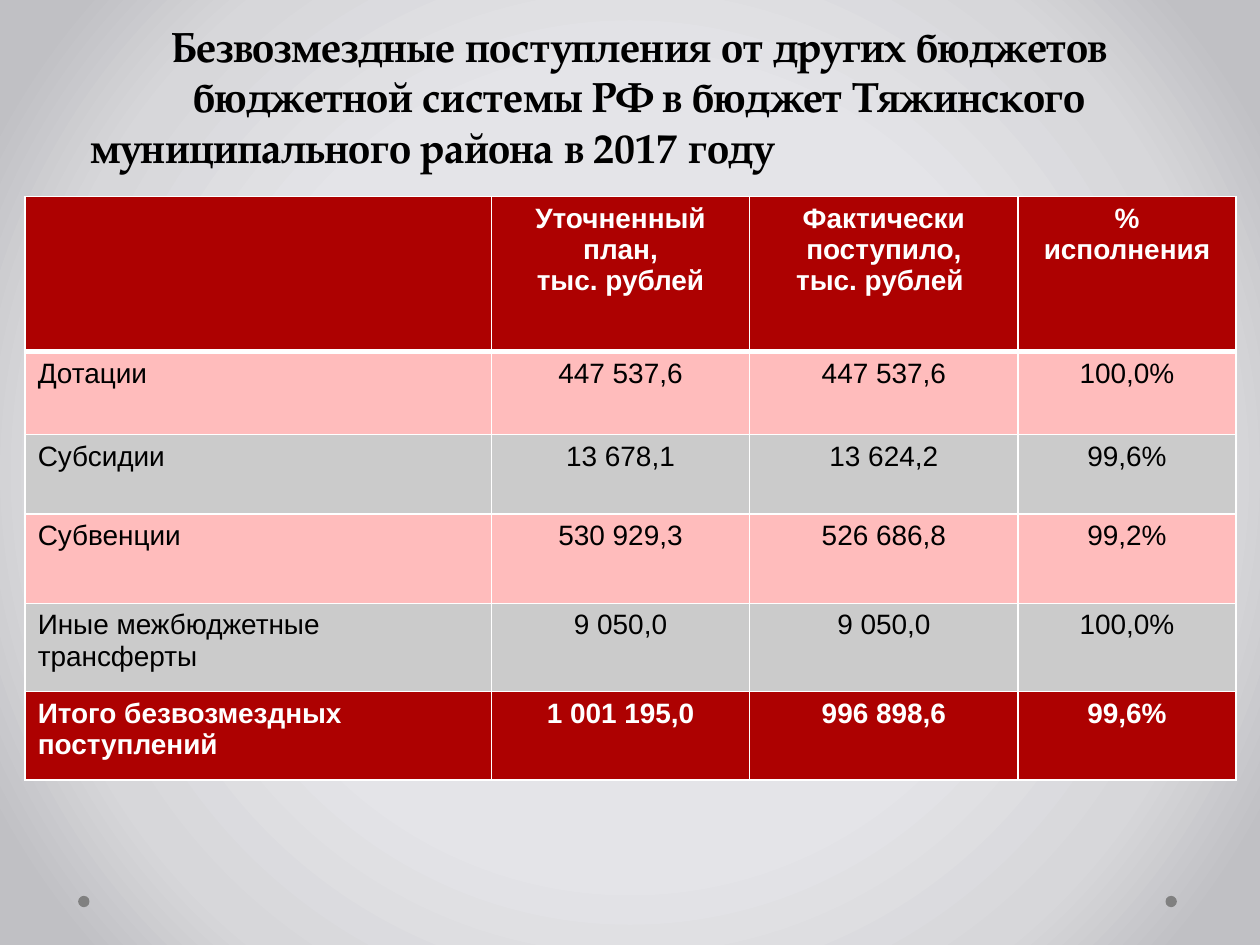
from dataclasses import dataclass

from lxml.etree import SubElement
from pptx import Presentation
from pptx.dml.color import RGBColor
from pptx.enum.shapes import MSO_SHAPE
from pptx.enum.text import MSO_ANCHOR, PP_ALIGN
from pptx.oxml import parse_xml
from pptx.oxml.ns import nsdecls, qn
from pptx.util import Inches, Pt


@dataclass(frozen=True)
class Theme:
    title_font: str = "TeX Gyre Pagella"
    table_font: str = "Arial"
    title_size: int = 24
    table_size: int = 16
    black: str = "000000"
    white: str = "FFFFFF"
    red: str = "AD0101"
    pink: str = "FFBCBC"
    grey: str = "CBCBCB"
    dot: str = "808080"
    background: tuple = ((50, "E4E4E8"), (76, "D7D7DA"), (92, "C0C0C4"))
    border: int = 1
    header_border: int = 3


@dataclass(frozen=True)
class TableRow:
    cells: tuple
    height: float
    fill: str
    color: str = "000000"
    bold: bool = False


THEME = Theme()
COLUMN_WIDTHS = (3.7, 2.05, 2.13, 1.73)
ROWS = (
    TableRow(("", "Уточненный план,\nтыс. рублей", "Фактически поступило,\nтыс. рублей ",
              "% исполнения"), 1.23, THEME.red, THEME.white, True),
    TableRow(("Дотации", "447 537,6", "447 537,6", "100,0%"), 0.66, THEME.pink),
    TableRow(("Субсидии", "13 678,1", "13 624,2", "99,6%"), 0.63, THEME.grey),
    TableRow(("Субвенции", "530 929,3", "526 686,8", "99,2%"), 0.71, THEME.pink),
    TableRow(("Иные межбюджетные трансферты", "9 050,0", "9 050,0", "100,0%"),
             0.7, THEME.grey),
    TableRow(("Итого безвозмездных поступлений", "1 001 195,0", "996 898,6", "99,6%"),
             0.7, THEME.red, THEME.white, True),
)


def style_paragraph(paragraph, font: str, size: int, color: str, bold: bool, align) -> None:
    paragraph.alignment = align
    paragraph.font.name = font
    paragraph.font.size = Pt(size)
    paragraph.font.bold = bold
    paragraph.font.color.rgb = RGBColor.from_string(color)


def set_background(slide) -> None:
    """Fill the slide with a gradient spreading from its centre."""
    fill = slide.background.fill
    fill.solid()
    stops = "".join(
        f'<a:gs pos="{position * 1000}"><a:srgbClr val="{color}"/></a:gs>'
        for position, color in THEME.background
    )
    gradient = parse_xml(
        f'<a:gradFill {nsdecls("a")} rotWithShape="1"><a:gsLst>{stops}</a:gsLst>'
        '<a:path path="circle"><a:fillToRect l="50000" t="50000" r="50000" b="50000"/>'
        "</a:path></a:gradFill>"
    )
    solid = next(slide.element.iter(qn("a:solidFill")))
    solid.getparent().replace(solid, gradient)


def add_dot(slide, left: float) -> None:
    dot = slide.shapes.add_shape(
        MSO_SHAPE.OVAL, Inches(left), Inches(7.11), Inches(0.09), Inches(0.09))
    dot.shadow.inherit = False
    dot.fill.solid()
    dot.fill.fore_color.rgb = RGBColor.from_string(THEME.dot)
    dot.line.fill.background()


def add_title(slide) -> None:
    box = slide.shapes.add_textbox(Inches(0.43), Inches(0), Inches(9.29), Inches(1.41))
    frame = box.text_frame
    frame.word_wrap = True
    frame.vertical_anchor = MSO_ANCHOR.BOTTOM
    frame.text = (
        "Безвозмездные поступления от других бюджетов бюджетной системы РФ в бюджет Тяжинского\n"
        "муниципального района в 2017 году"
    )
    for paragraph, align in zip(frame.paragraphs, (PP_ALIGN.CENTER, PP_ALIGN.LEFT)):
        style_paragraph(paragraph, THEME.title_font, THEME.title_size, THEME.black, True, align)
    # The closing line starts slightly inside the text box
    properties = frame.paragraphs[1]._p.get_or_add_pPr()
    properties.set("marL", str(Inches(0.19)))
    properties.set("indent", "0")


def set_borders(cell, top: int, bottom: int) -> None:
    properties = cell._tc.get_or_add_tcPr()
    widths = {"a:lnL": THEME.border, "a:lnR": THEME.border, "a:lnT": top, "a:lnB": bottom}
    for tag, width in widths.items():
        line = SubElement(properties, qn(tag), w=str(Pt(width)))
        SubElement(SubElement(line, qn("a:solidFill")), qn("a:srgbClr"), val=THEME.white)


def fill_cell(cell, row: TableRow, row_index: int, column_index: int) -> None:
    # Borders come before the fill in the cell properties
    set_borders(
        cell,
        top=THEME.header_border if row_index == 1 else THEME.border,
        bottom=THEME.header_border if row_index == 0 else THEME.border,
    )
    cell.fill.solid()
    cell.fill.fore_color.rgb = RGBColor.from_string(row.fill)
    cell.text = row.cells[column_index]
    align = PP_ALIGN.CENTER if column_index else PP_ALIGN.LEFT
    for paragraph in cell.text_frame.paragraphs:
        style_paragraph(
            paragraph, THEME.table_font, THEME.table_size, row.color, row.bold, align)


def add_revenue_table(slide) -> None:
    table = slide.shapes.add_table(
        len(ROWS), len(COLUMN_WIDTHS), Inches(0.2), Inches(1.56),
        Inches(sum(COLUMN_WIDTHS)), Inches(sum(row.height for row in ROWS)),
    ).table
    for column, width in zip(table.columns, COLUMN_WIDTHS):
        column.width = Inches(width)
    for row_index, row in enumerate(ROWS):
        table.rows[row_index].height = Inches(row.height)
        for column_index in range(len(COLUMN_WIDTHS)):
            fill_cell(table.cell(row_index, column_index), row, row_index, column_index)


def main() -> None:
    presentation = Presentation()
    presentation.slide_width = Inches(10)
    presentation.slide_height = Inches(7.5)
    slide = presentation.slides.add_slide(presentation.slide_layouts[6])

    # Backdrop with its two corner dots
    set_background(slide)
    for left in (9.25, 0.62):
        add_dot(slide, left)

    # Content
    add_title(slide)
    add_revenue_table(slide)
    presentation.save("out.pptx")


if __name__ == "__main__":
    main()
